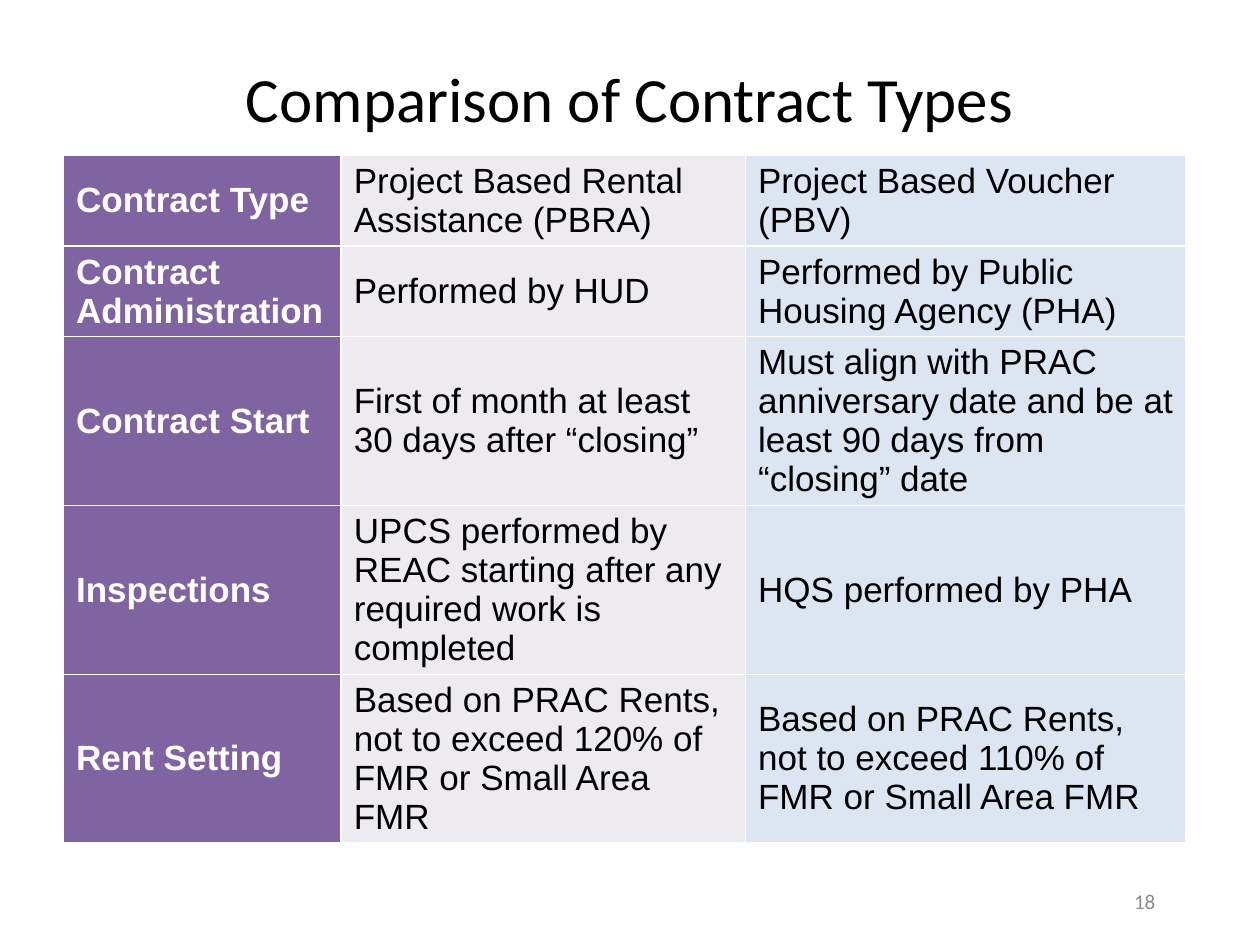
from pptx import Presentation
from pptx.dml.color import RGBColor
from pptx.enum.text import MSO_ANCHOR, PP_ALIGN
from pptx.oxml import parse_xml
from pptx.oxml.ns import nsdecls
from pptx.util import Cm, Pt

MID = MSO_ANCHOR.MIDDLE
CENTER = PP_ALIGN.CENTER
WHITE = RGBColor(0xFF, 0xFF, 0xFF)
BLACK = RGBColor(0, 0, 0)
GRAY = RGBColor(0x8C, 0x8C, 0x8C)
PURPLE = RGBColor(0x80, 0x64, 0xA2)
LILAC = RGBColor(0xED, 0xEA, 0xF0)
BLUE = RGBColor(0xDC, 0xE6, 0xF2)

HEAD = {"name": "Arial", "size": Pt(20), "bold": True}
BODY = {**HEAD, "bold": False}
TITLE = {"name": "Calibri", "size": Pt(36)}
NUMBER = {**TITLE, "size": Pt(12)}

COLUMNS = [
    (5.6, PURPLE, WHITE, HEAD),
    (8.15, LILAC, BLACK, BODY),
    (8.88, BLUE, BLACK, BODY),
]
ROWS = [
    ("Contract Type", "Project Based Rental Assistance (PBRA)",
     "Project Based Voucher (PBV)"),
    ("Contract Administration", "Performed by HUD",
     "Performed by Public Housing Agency (PHA)"),
    ("Contract Start", "First of month at least 30 days after “closing”",
     "Must align with PRAC anniversary date and be at least 90 days "
     "from “closing” date"),
    ("Inspections",
     "UPCS performed by REAC starting after any required work is completed",
     "HQS performed by PHA"),
    ("Rent Setting",
     "Based on PRAC Rents, not to exceed 120% of FMR or Small Area FMR",
     "Based on PRAC Rents, not to exceed 110% of FMR or Small Area FMR"),
]


class Deck:
    """Hold the style and current slide, and draw each kind of element."""

    def __init__(self, slide, rule=WHITE, width=Pt(1)):
        self.slide = slide
        self.rule = rule
        self.width = width

    def fill_text(self, frame, text, color, style):
        para = frame.paragraphs[0]
        run = para.add_run()
        run.text = text
        for key, value in style.items():
            setattr(run.font, key, value)
        run.font.color.rgb = color
        return para

    def text(self, box, text, color, style):
        frame = self.slide.shapes.add_textbox(*map(Cm, box)).text_frame
        frame.word_wrap = True
        frame.vertical_anchor = MID
        self.fill_text(frame, text, color, style).alignment = CENTER

    def border(self, cell):
        props = cell._tc.get_or_add_tcPr()
        for side in "LRTB":
            props.append(parse_xml(
                f'<a:ln{side} {nsdecls("a")} w="{self.width}"><a:solidFill>'
                f'<a:srgbClr val="{self.rule}"/></a:solidFill></a:ln{side}>'))

    def table(self, left, top, height, columns, rows):
        wide = sum(col[0] for col in columns)
        grid = self.slide.shapes.add_table(
            len(rows), len(columns), Cm(left), Cm(top),
            Cm(wide), Cm(height * len(rows))).table
        grid.first_row = grid.horz_banding = False
        for c, (width, fill, color, style) in enumerate(columns):
            grid.columns[c].width = Cm(width)
            for r, row in enumerate(rows):
                cell = grid.cell(r, c)
                self.border(cell)
                cell.fill.solid()
                cell.fill.fore_color.rgb = fill
                cell.vertical_anchor = MID
                self.fill_text(cell.text_frame, row[c], color, style)


def main():
    prs = Presentation()
    prs.slide_width, prs.slide_height = Cm(25.4), Cm(19.05)
    deck = Deck(prs.slides.add_slide(prs.slide_layouts[6]))
    deck.table(1.28, 3.13, 1.04, COLUMNS, ROWS)
    deck.text((1.48, 1.22, 22.43, 1.48), "Comparison of Contract Types",
              BLACK, TITLE)
    deck.text((22.55, 17.65, 1.05, 1.02), "18", GRAY, NUMBER)
    prs.save("out.pptx")


if __name__ == "__main__":
    main()
